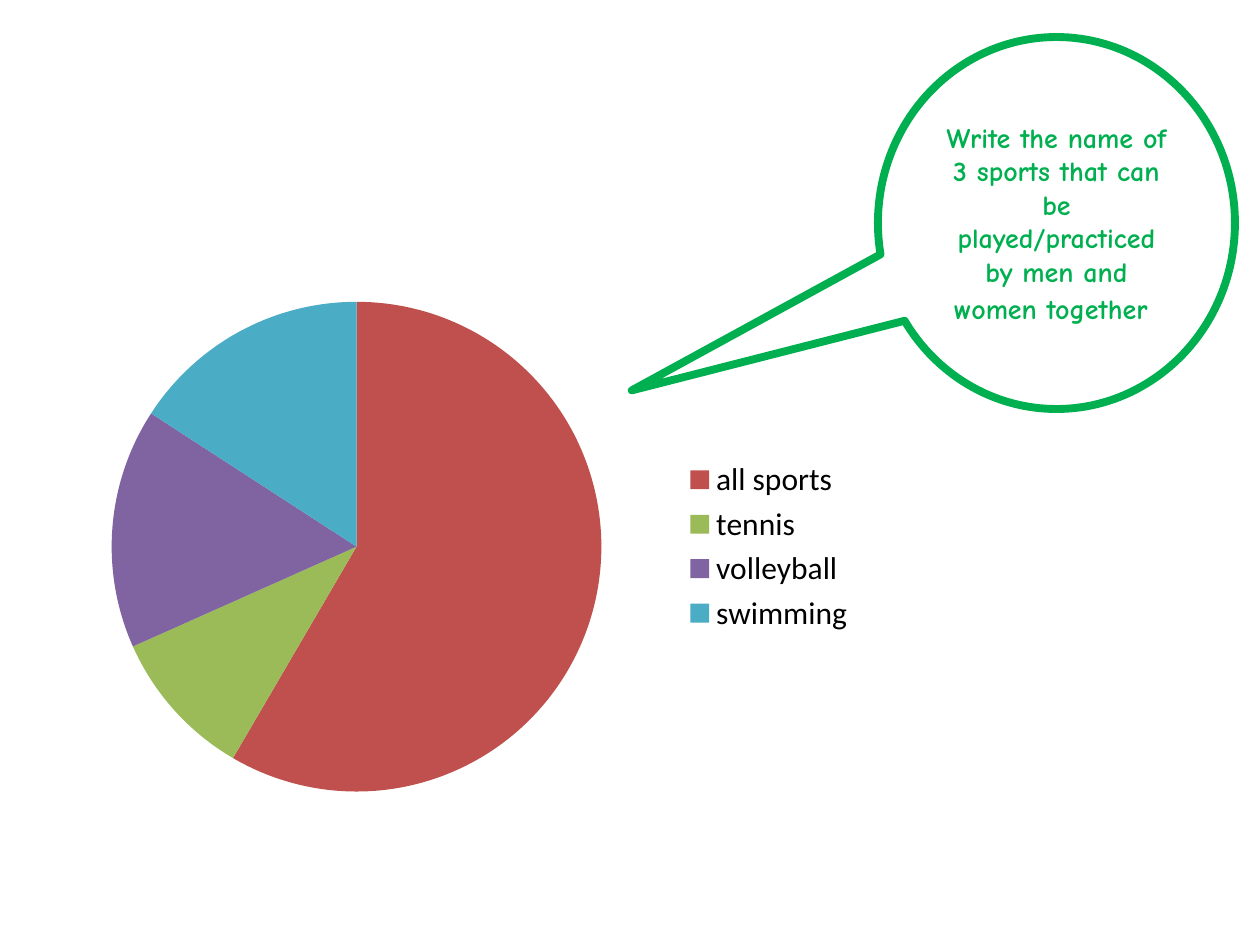
from pptx import Presentation
from pptx.chart.data import CategoryChartData
from pptx.dml.color import RGBColor
from pptx.enum.chart import XL_CHART_TYPE as ChartType, XL_LEGEND_POSITION as LegendPosition
from pptx.enum.shapes import MSO_SHAPE as Shape
from pptx.enum.text import MSO_ANCHOR as Anchor, PP_ALIGN as Align
from pptx.oxml import parse_xml
from pptx.oxml.ns import nsdecls
from pptx.util import Pt

PX = 914400 // 126
COLORS = {
    "white": "FFFFFF", "black": "000000", "green": "00B050",
    "blue": "4F81BD", "red": "C0504D", "lime": "9BBB59",
    "purple": "8064A2", "aqua": "4BACC6",
}

# Content: category, value, slice colour
SLICES = [
    (" 3 sports that can be played/practiced by men and women together ", None, "blue"),
    ("all sports", 59, "red"),
    ("tennis ", 10, "lime"),
    ("volleyball", 16, "purple"),
    ("swimming", 16, "aqua"),
]
CALLOUT_RUNS = [
    ("Write the name of 3 sports that can be played/practiced by men and women together", 16),
    (" ", 18),
]
CHART_AREA = (35, 284, 833, 525)
PIE_AREA = (112, 302, 490, 490)
CALLOUT_AREA = (878, 37, 357, 372)
CALLOUT_TIP = (-1.19, 0.45)


def rgb(name):
    return RGBColor.from_string(COLORS[name])


def emu(area):
    return [length * PX for length in area]


deck = Presentation()
deck.slide_width, deck.slide_height = emu((1260, 945))
page = deck.slides.add_slide(deck.slide_layouts[6])

# Pie chart
data = CategoryChartData()
data.categories = [name for name, _, _ in SLICES]
data.add_series("Series 1", [value for _, value, _ in SLICES])
chart = page.shapes.add_chart(ChartType.PIE, *emu(CHART_AREA), data).chart
chart.has_title = False
chart.font.name = "Calibri"
chart.font.size = Pt(10)
chart.font.color.rgb = rgb("black")
plot = chart.plots[0]
plot.vary_by_categories = True
for index, (_, _, color) in enumerate(SLICES):
    fill = plot.series[0].points[index].format.fill
    fill.solid()
    fill.fore_color.rgb = rgb(color)

# Pie placement as fractions of the chart area
left, top, width, height = CHART_AREA
fractions = {
    "x": (PIE_AREA[0] - left) / width, "y": (PIE_AREA[1] - top) / height,
    "w": PIE_AREA[2] / width, "h": PIE_AREA[3] / height,
}
modes = '<c:xMode val="edge"/><c:yMode val="edge"/>'
sizes = "".join(f'<c:{key} val="{value:.3f}"/>' for key, value in fractions.items())
plot_area = chart._chartSpace.chart.plotArea
for old_layout in plot_area.findall("{*}layout"):
    plot_area.remove(old_layout)
plot_area.insert(0, parse_xml(
    f'<c:layout {nsdecls("c")}><c:manualLayout><c:layoutTarget val="inner"/>'
    f"{modes}{sizes}</c:manualLayout></c:layout>"))

# Legend, without the entry that has no value
chart.has_legend = True
legend = chart.legend
legend.position = LegendPosition.RIGHT
legend.include_in_layout = False
legend.font.size = Pt(18)
legend.font.name = "Calibri"
legend.font.color.rgb = rgb("black")
legend._element.find("{*}legendPos").addnext(parse_xml(
    f'<c:legendEntry {nsdecls("c")}><c:idx val="0"/><c:delete val="1"/></c:legendEntry>'))

# Speech callout
callout = page.shapes.add_shape(Shape.OVAL_CALLOUT, *emu(CALLOUT_AREA))
callout.shadow.inherit = False
callout.adjustments[0], callout.adjustments[1] = CALLOUT_TIP
callout.fill.solid()
callout.fill.fore_color.rgb = rgb("white")
callout.line.color.rgb = rgb("green")
callout.line.width = Pt(4.5)
frame = callout.text_frame
frame.word_wrap = True
frame.vertical_anchor = Anchor.MIDDLE
para = frame.paragraphs[0]
para.alignment = Align.CENTER
for text, size in CALLOUT_RUNS:
    span = para.add_run()
    span.text = text
    span.font.name = "Comic Neue"
    span.font.size = Pt(size)
    span.font.bold = True
    span.font.color.rgb = rgb("green")

deck.save("out.pptx")
